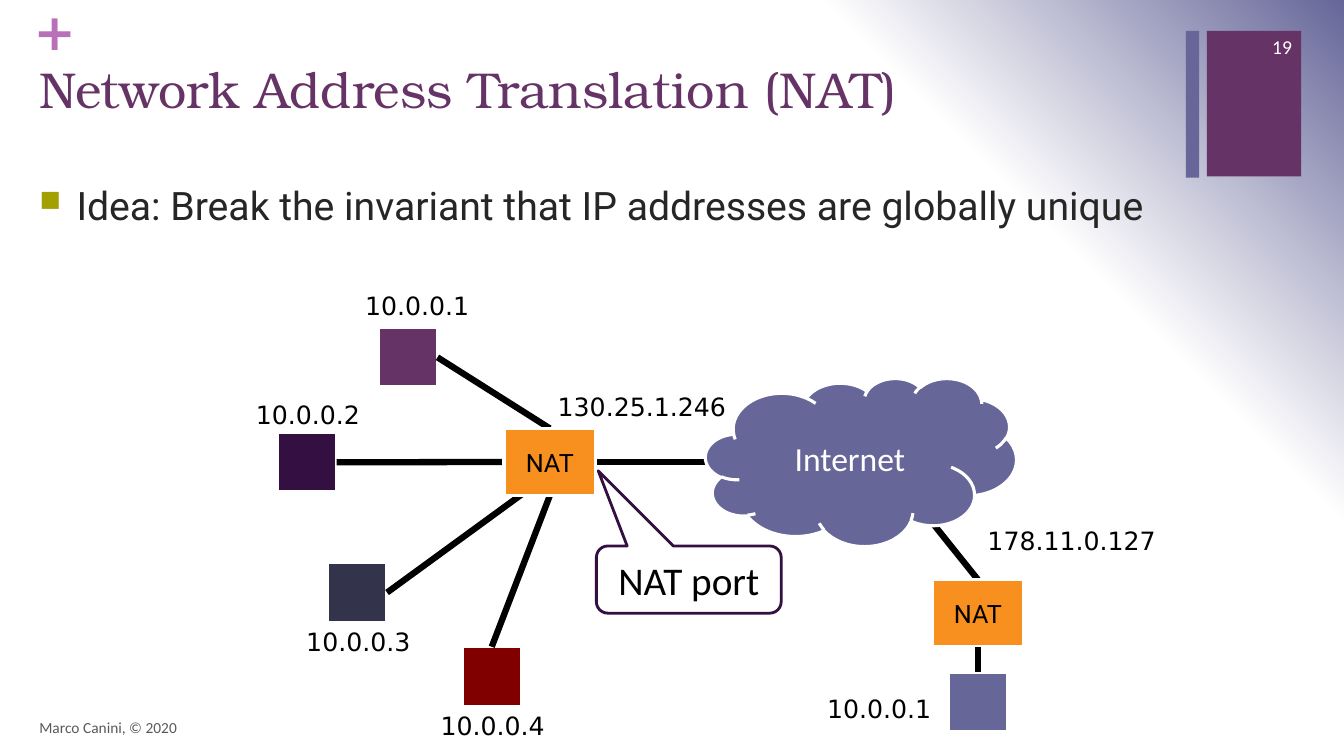
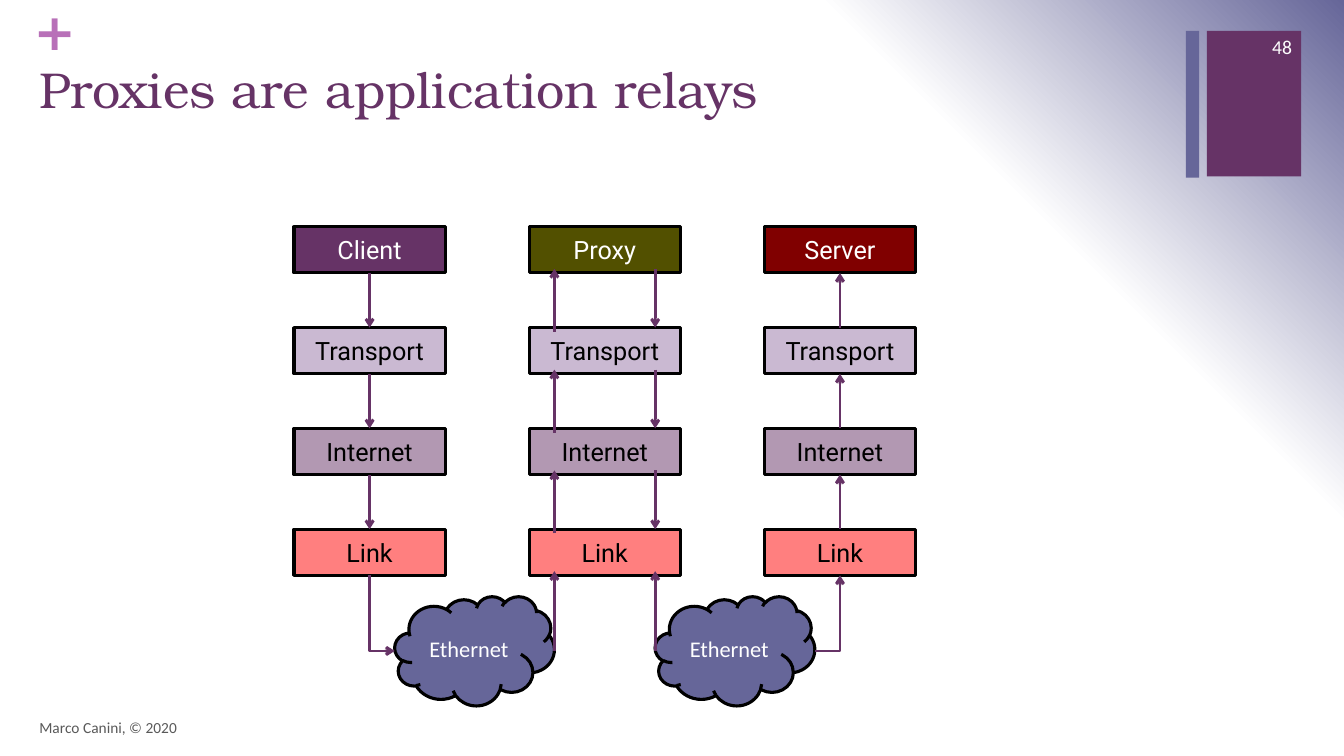
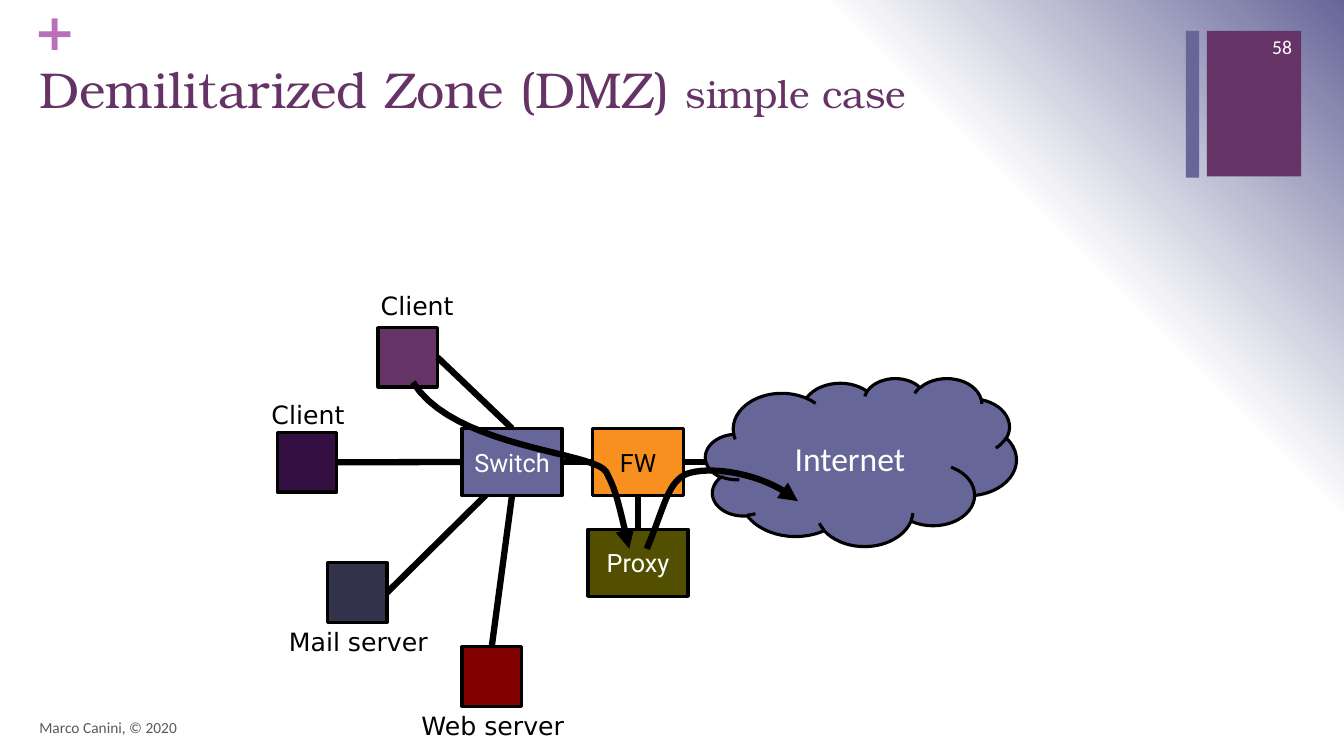
from lxml import etree
from pptx import Presentation
from pptx.dml.color import RGBColor
from pptx.enum import shapes, text
from pptx.oxml import parse_xml
from pptx.oxml.ns import nsdecls, qn
from pptx.util import Pt

COLOURS = {
    "plum": "663366", "slate": "666699", "orchid": "B870B8", "night": "330F42",
    "navy": "33334C", "maroon": "800000", "orange": "F7901E", "olive": "525000",
    "lilac": "9775A7", "red": "FF0000", "lime": "A3A101", "ink": "262626",
    "grey": "595959", "black": "000000", "white": "FFFFFF",
}
TITLE_FONT, BOX_FONT, LABEL_FONT, PLAIN_FONT = "TeX Gyre Bonum", "Roboto", "DejaVu Sans", "Calibri"
KINDS = shapes.MSO_SHAPE
LEFT, CENTRE, RIGHT = text.PP_ALIGN.LEFT, text.PP_ALIGN.CENTER, text.PP_ALIGN.RIGHT
TOP, MIDDLE = text.MSO_ANCHOR.TOP, text.MSO_ANCHOR.MIDDLE

HOST = 42.5                     # side of a host square
HUB_TOP, HUB_HEIGHT = 306, 48   # the row of boxes in the network drawings
HUB_MIDDLE = HUB_TOP + HUB_HEIGHT / 2
NAT_WIDTH, SWITCH_WIDTH = 65.5, 71.5


def rgb(name):
    return RGBColor.from_string(COLOURS[name])


# Text
def write(box, words, font, size, colour, align=LEFT, anchor=MIDDLE, bold=None):
    """Fill a shape with one paragraph and return it."""
    box.text_frame.vertical_anchor = anchor
    para = box.text_frame.paragraphs[0]
    para.alignment = align
    para.font.name, para.font.size, para.font.bold = font, Pt(size), bold
    para.font.color.rgb = rgb(colour)
    para.add_run().text = words
    return para


def add_text(page, at, words, font, size, colour, wrap=True, **style):
    box = page.shapes.add_textbox(*map(Pt, at))
    box.text_frame.word_wrap = wrap
    return box, write(box, words, font, size, colour, **style)


def add_label(page, centre, top, width, words):
    box, _ = add_text(page, (centre - width / 2, top, width, 28.8), words, LABEL_FONT, 18,
                      "black", wrap=False, align=CENTRE, anchor=TOP)
    box.text_frame.auto_size = text.MSO_AUTO_SIZE.SHAPE_TO_FIT_TEXT


def add_bullet(page, at, words):
    _, para = add_text(page, at, words, BOX_FONT, 28, "ink", anchor=TOP)
    para.space_before = Pt(20)
    props = para._p.get_or_add_pPr()
    props.set("marL", str(Pt(26.6)))
    props.set("indent", str(-Pt(26.6)))
    font_props = props.find(qn("a:defRPr"))
    for markup in (f'<a:buClr {nsdecls("a")}><a:srgbClr val="{COLOURS["lime"]}"/></a:buClr>',
                   f'<a:buSzPct {nsdecls("a")} val="75000"/>',
                   f'<a:buChar {nsdecls("a")} char="■"/>'):
        font_props.addprevious(parse_xml(markup))


# Shapes and lines
def add_box(page, at, fill, line=None, kind=KINDS.RECTANGLE, line_width=2.25, alpha=None):
    box = page.shapes.add_shape(kind, *map(Pt, at))
    box.shadow.inherit = False
    box.fill.solid()
    box.fill.fore_color.rgb = rgb(fill)
    if alpha:
        colour = box._element.spPr.find(qn("a:solidFill"))[0]
        etree.SubElement(colour, qn("a:alpha")).set("val", str(alpha * 1000))
    if line:
        box.line.color.rgb = rgb(line)
        box.line.width = Pt(line_width)
    else:
        box.line.fill.background()
    return box


def add_named_box(page, at, words, fill, line, colour="black", alpha=None):
    write(add_box(page, at, fill, line, alpha=alpha), words, BOX_FONT, 18, colour, CENTRE)


def add_cloud(page, at, words, size, line):
    cloud = add_box(page, at, "slate", line, KINDS.CLOUD)
    write(cloud, words, PLAIN_FONT, size, "white", CENTRE)


def style_line(item, colour, width, end=None, tip="arrow"):
    """Colour a line; end is headEnd (start of line), tailEnd or None."""
    item.line.color.rgb = rgb(colour)
    item.line.width = Pt(width)
    if end:
        etree.SubElement(item.line._get_or_add_ln(), qn(f"a:{end}")).set("type", tip)


def add_line(page, start, finish, colour="black", width=4.5, end=None, elbow=False):
    kind = shapes.MSO_CONNECTOR.ELBOW if elbow else shapes.MSO_CONNECTOR.STRAIGHT
    line = page.shapes.add_connector(kind, *map(Pt, (*start, *finish)))
    props = line._element.spPr
    if elbow:
        props.find(qn("a:prstGeom")).set("prst", "bentConnector2")
    style_line(line, colour, width, end)
    etree.SubElement(props, qn("a:effectLst"))


def add_arrow(page, start, finish, end="tailEnd", elbow=False):
    add_line(page, start, finish, "plum", 2, end, elbow)


def add_curved_arrow(page, points, steps=20):
    """Draw joined cubic curves: a start, then two handles and an end for each."""
    track = []
    for first in range(0, len(points) - 1, 3):
        corners = points[first:first + 4]
        for step in range(1, steps + 1):
            t = step / steps
            weights = ((1 - t) ** 3, 3 * t * (1 - t) ** 2, 3 * t * t * (1 - t), t ** 3)
            track.append(tuple(Pt(sum(w * c[axis] for w, c in zip(weights, corners)))
                               for axis in (0, 1)))
    builder = page.shapes.build_freeform(*map(Pt, points[0]))
    builder.add_line_segments(track, close=False)
    curve = builder.convert_to_shape()
    curve.shadow.inherit = False
    curve.fill.background()
    style_line(curve, "black", 4.5, "tailEnd", "triangle")


# Frame shared by all slides
def add_background(page):
    page.background.fill.solid()
    solid = page.background._cSld.find(".//" + qn("a:solidFill"))
    stops = "".join(f'<a:gs pos="{place * 1000}"><a:srgbClr val="{COLOURS[name]}"/></a:gs>'
                    for place, name in ((0, "white"), (75, "white"), (100, "slate")))
    solid.getparent().replace(solid, parse_xml(
        f'<a:gradFill {nsdecls("a")} rotWithShape="1"><a:gsLst>{stops}</a:gsLst>'
        '<a:path path="circle"><a:fillToRect t="100000" r="100000"/></a:path></a:gradFill>'))


def add_page(deck, number, title, subtitle=None):
    page = deck.slides.add_slide(deck.slide_layouts[6])
    add_background(page)
    add_box(page, (862, 22, 67.5, 104), "plum")
    add_box(page, (847, 22, 9.5, 105), "slate")
    plus, _ = add_text(page, (24, 0, 27, 44), "+", LABEL_FONT, 36, "orchid",
                       anchor=TOP, bold=True)
    frame = plus.text_frame
    frame.margin_left = frame.margin_right = frame.margin_top = frame.margin_bottom = 0
    _, para = add_text(page, (21, 38, 824.5, 88), title, TITLE_FONT, 36, "plum", anchor=TOP)
    if subtitle:
        span = para.add_run()
        span.text = subtitle
        span.font.size = Pt(28)
    add_text(page, (21, 505.5, 643, 28.8), "Marco Canini, © 2020", PLAIN_FONT, 11, "grey")
    add_text(page, (872, 19, 58, 28.8), str(number), PLAIN_FONT, 14, "white", align=RIGHT)
    return page


# Local network: four hosts linked to a hub
def add_host(page, left, top, fill, line):
    add_box(page, (left, top, HOST, HOST), fill, line)


def add_local_network(page, labels, hub_left, hub_width, line):
    hub_centre = hub_left + hub_width / 2
    hub_bottom = HUB_TOP + HUB_HEIGHT
    half = HOST / 2
    # host left, top, fill; label centre, top; link start within host; link end at hub
    hosts = (
        (270, 234, "plum", 298, 204, (HOST, half), (hub_centre, HUB_TOP)),
        (198, 309, "night", 220, 282, (HOST, half), (hub_left, HUB_MIDDLE)),
        (234, 402, "navy", 256, 444, (HOST, half), (hub_centre - 13, hub_bottom - 6)),
        (330, 462, "maroon", 352, 504, (half, 0), (hub_centre, hub_bottom)),
    )
    for host, (words, width) in zip(hosts, labels):
        left, top, fill, label_centre, label_top, (dx, dy), link_end = host
        add_host(page, left, top, fill, line)
        add_label(page, label_centre, label_top, width, words)
        add_line(page, (left + dx, top + dy), link_end)


def add_internet(page, line):
    add_cloud(page, (504, 270, 222, 120), "Internet", 24, line)


# Slides
def add_nat_slide(deck):
    page = add_page(deck, 19, "Network Address Translation (NAT)")
    add_bullet(page, (21, 126, 916.5, 379.5),
               "Idea: Break the invariant that IP addresses are globally unique")
    add_local_network(page, [(f"10.0.0.{n}", 92) for n in range(1, 5)], 360, NAT_WIDTH, "white")
    far_centre = 698.5
    add_host(page, far_centre - HOST / 2, 480, "slate", "white")
    add_line(page, (360 + NAT_WIDTH, HUB_MIDDLE), (505, HUB_MIDDLE))
    add_line(page, (far_centre, 414), (660, 366))
    add_internet(page, "white")
    callout = add_box(page, (426, 390, 132, 48), "white", "night",
                      KINDS.ROUNDED_RECTANGULAR_CALLOUT, 2)
    for index, value in enumerate((-0.49, -1.62, 0.17)):
        callout.adjustments[index] = value
    write(callout, "NAT port", PLAIN_FONT, 28, "black", CENTRE)
    for left, top in ((360, HUB_TOP), (far_centre - NAT_WIDTH / 2, 414)):
        add_named_box(page, (left, top, NAT_WIDTH, HUB_HEIGHT), "NAT", "orange", "white")
    add_line(page, (far_centre, 480), (far_centre, 462))
    add_label(page, 458.5, 276, 138, "130.25.1.246")
    add_label(page, 765.5, 372, 138, "178.11.0.127")
    add_label(page, 628, 492, 92, "10.0.0.1")


def add_proxy_slide(deck):
    page = add_page(deck, 48, "Proxies are application relays")
    width, height = 108, 33
    lefts = [210 + 168 * column for column in range(3)]
    tops = [162 + 72 * row for row in range(4)]
    layers = (("Transport", "lilac"), ("Internet", "plum"), ("Link", "red"))
    ends = (("Client", "plum"), ("Proxy", "olive"), ("Server", "maroon"))

    # Protocol stacks
    for left, (name, fill) in zip(lefts, ends):
        add_named_box(page, (left, tops[0], width, height), name, fill, "black", "white")
        for top, (layer, tint) in zip(tops[1:], layers):
            add_named_box(page, (left, top, width, height), layer, tint, "black", alpha=50)

    # Arrows between layers
    client, server = lefts[0] + width / 2, lefts[2] + width / 2
    upward, downward = lefts[1] + 18, lefts[1] + width - 18
    for upper, lower in zip(tops, tops[1:]):
        add_arrow(page, (client, upper + height), (client, lower))
        add_arrow(page, (server, lower), (server, upper + height))
        add_arrow(page, (upward, lower + 3), (upward, upper + height - 3))
        add_arrow(page, (downward, upper + height - 3), (downward, lower))

    # Networks below the stacks
    cloud_width, wire = 114, 465
    stack_bottom = tops[-1] + height
    for left in (upward - cloud_width, downward):
        add_cloud(page, (left, 426, cloud_width, 78), "Ethernet", 16, "black")
    for x in (upward, downward):
        add_arrow(page, (x, wire), (x, stack_bottom - 3))
    add_arrow(page, (upward - cloud_width, wire), (client, stack_bottom), "headEnd", elbow=True)
    add_arrow(page, (downward + cloud_width, wire), (server, stack_bottom), elbow=True)


def add_dmz_slide(deck):
    page = add_page(deck, 58, "Demilitarized Zone (DMZ) ", "simple case")
    labels = (("Client", 67), ("Client", 67), ("Mail server", 114.5), ("Web server", 117.5))
    switch_left, wall_left, proxy_left, proxy_top = 330, 423, 420, 378
    wall_right, wall_centre = wall_left + NAT_WIDTH, wall_left + NAT_WIDTH / 2
    add_local_network(page, labels, switch_left, SWITCH_WIDTH, "black")
    add_named_box(page, (switch_left, HUB_TOP, SWITCH_WIDTH, HUB_HEIGHT),
                  "Switch", "slate", "black", "white")
    add_line(page, (switch_left + SWITCH_WIDTH, HUB_MIDDLE), (wall_left, HUB_MIDDLE))
    add_internet(page, "black")
    add_named_box(page, (wall_left, HUB_TOP, NAT_WIDTH, HUB_HEIGHT), "FW", "orange", "black")
    add_line(page, (wall_right, HUB_MIDDLE), (505, HUB_MIDDLE))
    add_named_box(page, (proxy_left, proxy_top, SWITCH_WIDTH, HUB_HEIGHT),
                  "Proxy", "olive", "black", "white")
    add_line(page, (wall_centre, proxy_top), (wall_centre, HUB_TOP + HUB_HEIGHT))

    # Traffic from proxy to Internet, and from client to proxy
    add_curved_arrow(page, ((462, 392), (474, 364), (476, 348.5), (487, 340.5),
                            (498, 332), (543, 335), (570, 358)))
    add_curved_arrow(page, ((295, 273), (324, 320), (424, 322.5), (433, 337),
                            (440.5, 351.5), (441.5, 358), (449.5, 392)))


def main():
    deck = Presentation()
    deck.slide_width, deck.slide_height = Pt(960), Pt(540)
    add_nat_slide(deck)
    add_proxy_slide(deck)
    add_dmz_slide(deck)
    deck.save("out.pptx")


if __name__ == "__main__":
    main()
